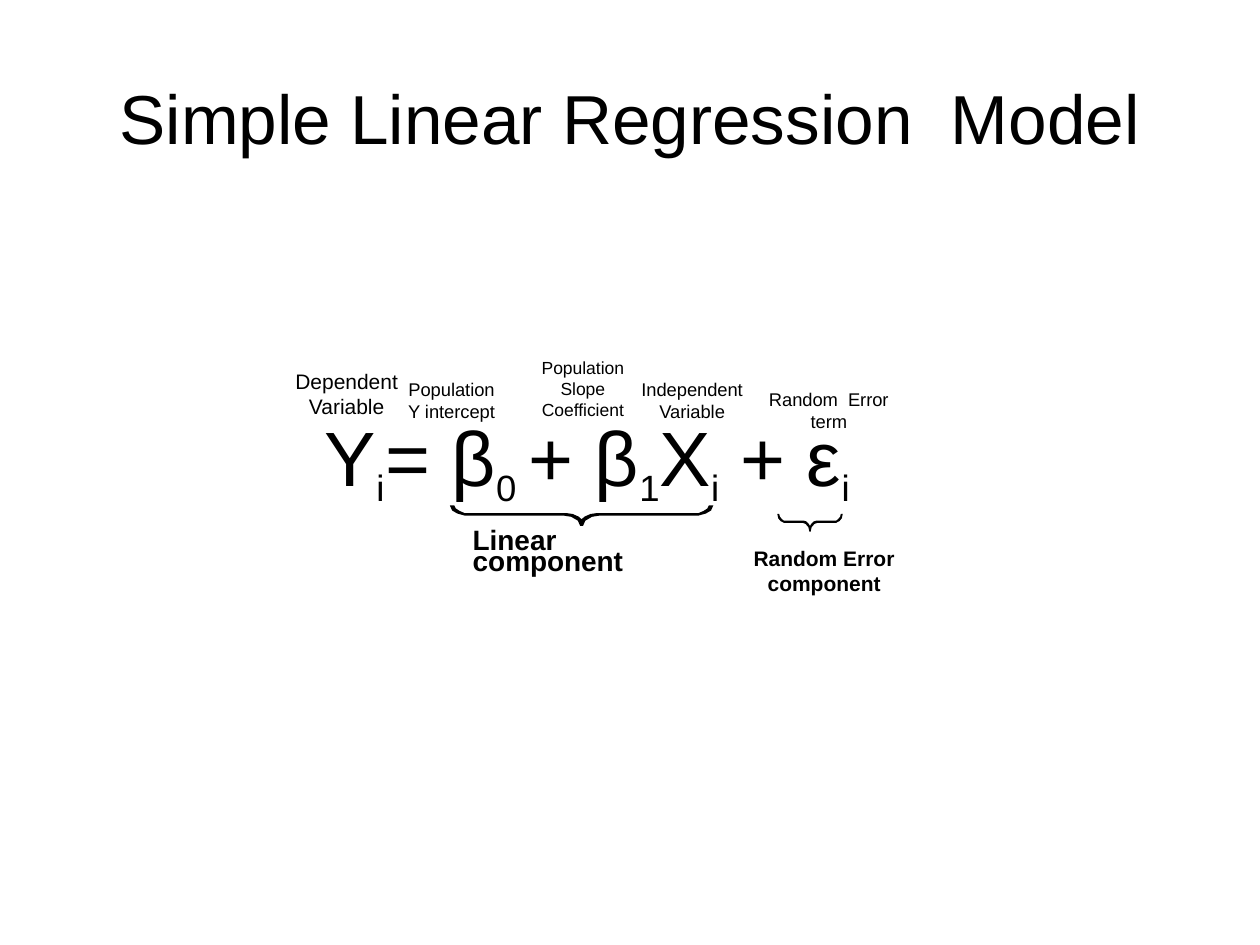
from lxml.etree import SubElement
from pptx import Presentation
from pptx.dml.color import RGBColor
from pptx.enum.text import MSO_ANCHOR, MSO_AUTO_SIZE, PP_ALIGN
from pptx.oxml.ns import qn
from pptx.util import Cm, Pt

BLACK = "000000"
TITLE = ("Simple Linear Regression  Model", (1.27, 0.76, 22.86, 3.18), 39.6)
LABELS = [
    ("Population\vY intercept", (8.05, 7.62, 2.11, 0.89), 10.5, False),
    ("Population Slope Coefficient", (10.8, 7.19, 1.9, 1.27), 10, False),
    ("Random  Error term", (15.44, 7.82, 2.54, 0.89), 10.5, False),
    ("Dependent Variable", (5.72, 7.42, 2.54, 1.02), 12, False),
    ("Independent Variable", (12.9, 7.62, 2.11, 0.89), 10.5, False),
    ("Random Error component", (14.81, 11, 3.61, 1.02), 12, True),
]
LINEAR = ("Linear component", (9.53, 10.8, 4.65, 0.89), 16, True)
EQUATION_BOX = (6.55, 8.26, 13.77, 1.88)
EQUATION_TAB = 1.22
EQUATION = [
    ("Y", False, -120), ("i\t", True, -180), ("= β", False, 0),
    ("0 ", True, 60), ("+ β", False, 0), ("1", True, 0), ("X", False, 0),
    ("i", True, 0), (" + ε", False, 0), ("i", True, 110),
]
BRACES = [(9.07, 10.19, 5.31, 0.41, 0.3), (15.67, 10.36, 1.32, 0.36, 0.13)]
UPPER_END = [(0.3, 0), (0.4, 0.15), (0.65, 0.27), (1, 0.38)]
UPPER_TIP = [(1, 0.38), (0.6, 0.42), (0.2, 0.55), (0, 0.68)]
LOWER_END = [(0, 0), (0.15, 0.25), (0.5, 0.4), (1, 0.5)]
LOWER_TIP = [(1.2, 0.5), (0.7, 0.56), (0.25, 0.75), (0.1, 1)]


def color(value):
    """Turn a hex string into a colour."""
    return RGBColor.from_string(value)


def style(font, size, bold=False):
    """Set the common font look."""
    font.name, font.size, font.bold = "Arial", Pt(size), bold
    font.color.rgb = color(BLACK)


def add_box(s, box, inset=0):
    """Add a wrapping text box and return its frame and paragraph."""
    tf = s.shapes.add_textbox(*map(Cm, box)).text_frame
    tf.word_wrap = True
    if not inset:
        tf.margin_left = tf.margin_top = tf.margin_right = tf.margin_bottom = 0
        tf.auto_size = MSO_AUTO_SIZE.SHAPE_TO_FIT_TEXT
    return tf, tf.paragraphs[0]


def add_label(s, text, box, size, bold=False, align=PP_ALIGN.CENTER, inset=0):
    """Add a text box in one font."""
    tf, p = add_box(s, box, inset)
    p.text, p.alignment = text, align
    style(p.font, size, bold)
    return tf, p


def add_equation(s):
    """Add the regression equation with its subscripts."""
    tf, p = add_box(s, EQUATION_BOX)
    tabs = SubElement(p._p.get_or_add_pPr(), qn("a:tabLst"))
    SubElement(tabs, qn("a:tab"), pos=str(Cm(EQUATION_TAB)), algn="l")
    for text, subscript, spacing in EQUATION:
        r = p.add_run()
        r.text = text
        style(r.font, 36 if subscript else 44)
        rPr = r._r.get_or_add_rPr()
        rPr.set("spc", str(spacing))
        if subscript:
            rPr.set("baseline", "-24000")


def add_brace(s, left, top, width, height, corner):
    """Draw a downward brace mirrored about its centre."""
    def half(end, tip):
        return ([(corner * x, height * y) for x, y in end]
                + [(width / 2 - corner * x, height * y) for x, y in tip])

    def mirror(points):
        return [(width - x, y) for x, y in reversed(points)]

    upper, lower = half(UPPER_END, UPPER_TIP), half(LOWER_END, LOWER_TIP)
    outline = upper + mirror(upper) + lower[:0] + list(reversed(lower + mirror(lower)))
    points = [(Cm(left + x), Cm(top + y)) for x, y in outline]
    builder = s.shapes.build_freeform(*points[0])
    builder.add_line_segments(points[1:], close=True)
    sp = builder.convert_to_shape()
    sp.shadow.inherit = False
    sp.fill.solid()
    sp.fill.fore_color.rgb = color(BLACK)
    sp.line.fill.background()


def main():
    """Build the slide."""
    prs = Presentation()
    prs.slide_width, prs.slide_height = Cm(25.4), Cm(19.05)
    s = prs.slides.add_slide(prs.slide_layouts[6])
    tf, p = add_label(s, *TITLE, inset=1)
    tf.vertical_anchor = MSO_ANCHOR.MIDDLE
    add_equation(s)
    tf, p = add_label(s, *LINEAR, align=PP_ALIGN.LEFT)
    p.line_spacing = Pt(11.9)
    for label in LABELS:
        add_label(s, *label)
    for brace in BRACES:
        add_brace(s, *brace)
    prs.save("out.pptx")


if __name__ == "__main__":
    main()
